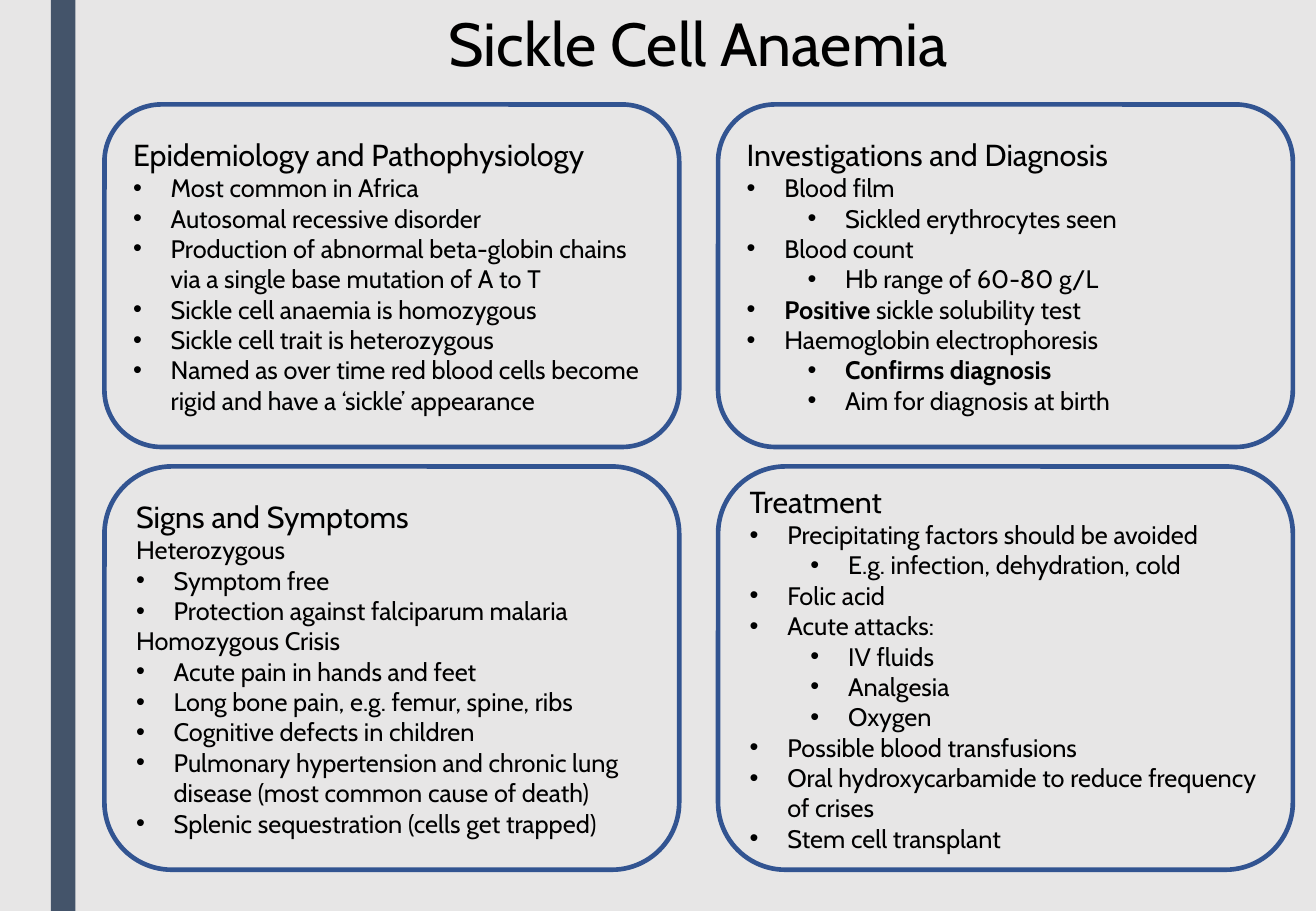
from lxml import etree
from pptx import Presentation
from pptx.dml.color import RGBColor
from pptx.enum import shapes, text
from pptx.oxml.ns import qn
from pptx.util import Inches, Pt

TITLE = "Sickle Cell Anaemia"
FONT = "Cabin"
BACK, BAR, EDGE, INK = "E7E6E6", "44546A", "325491", "000000"

# Each line is (level, text) or (level, bold text, text); level 0 has no bullet.
# Panels run row by row.
PANELS = [
    ("Epidemiology and Pathophysiology", [
        (1, "Most common in Africa"),
        (1, "Autosomal recessive disorder"),
        (1, "Production of abnormal beta-globin chains via a single base mutation of A to T"),
        (1, "Sickle cell anaemia is homozygous"),
        (1, "Sickle cell trait is heterozygous"),
        (1, "Named as over time red blood cells become rigid and have a ‘sickle’ appearance"),
    ]),
    ("Investigations and Diagnosis", [
        (1, "Blood film"),
        (2, "Sickled erythrocytes seen"),
        (1, "Blood count"),
        (2, "Hb range of 60-80 g/L"),
        (1, "Positive ", "sickle solubility test"),
        (1, "Haemoglobin electrophoresis"),
        (2, "Confirms diagnosis", ""),
        (2, "Aim for diagnosis at birth"),
    ]),
    ("Signs and Symptoms", [
        (0, "Heterozygous"),
        (1, "Symptom free"),
        (1, "Protection against falciparum malaria"),
        (0, "Homozygous Crisis"),
        (1, "Acute pain in hands and feet"),
        (1, "Long bone pain, e.g. femur, spine, ribs"),
        (1, "Cognitive defects in children"),
        (1, "Pulmonary hypertension and chronic lung disease (most common cause of death)"),
        (1, "Splenic sequestration (cells get trapped)"),
    ]),
    ("Treatment", [
        (1, "Precipitating factors should be avoided"),
        (2, "E.g. infection, dehydration, cold"),
        (1, "Folic acid"),
        (1, "Acute attacks:"),
        (2, "IV fluids"),
        (2, "Analgesia"),
        (2, "Oxygen"),
        (1, "Possible blood transfusions"),
        (1, "Oral hydroxycarbamide to reduce frequency of crises"),
        (1, "Stem cell transplant"),
    ]),
]
COLS = [0.86, 5.91]
ROWS = [(0.86, 2.82), (3.84, 3.32)]  # top, height
WIDTH = 4.73
HANG, STEP = 0.31, 0.5


def color(code):
    return RGBColor.from_string(code)


def style(para, size, align):
    para.alignment = align
    para.font.size = Pt(size)
    para.font.name = FONT
    para.font.color.rgb = color(INK)


def bullet(para, level):
    para.level = level - 1
    props = para._p.get_or_add_pPr()
    props.set("marL", str(Inches(HANG + STEP * (level - 1))))
    props.set("indent", str(-Inches(HANG)))
    mark = etree.Element(qn("a:buChar"), char="•")
    face = etree.Element(qn("a:buFont"), typeface="Arial")
    props.insert(0, face)
    face.addnext(mark)


def add_line(frame, level, *parts):
    para = frame.add_paragraph()
    for i, part in enumerate(filter(None, parts)):
        run = para.add_run()
        run.text = part
        if len(parts) == 2 and i == 0:
            run.font.bold = True
    style(para, 15, text.PP_ALIGN.LEFT)
    if level:
        bullet(para, level)


def add_panel(slide, box, head, lines):
    panel = slide.shapes.add_shape(shapes.MSO_SHAPE.ROUNDED_RECTANGLE, *map(Inches, box))
    panel.shadow.inherit = False
    panel.fill.background()
    panel.line.color.rgb = color(EDGE)
    panel.line.width = Pt(2.75)
    frame = panel.text_frame
    frame.word_wrap = True
    frame.vertical_anchor = text.MSO_ANCHOR.MIDDLE
    para = frame.paragraphs[0]
    para.text = head
    style(para, 18, text.PP_ALIGN.LEFT)
    for line in lines:
        add_line(frame, *line)


def main():
    deck = Presentation()
    deck.slide_width, deck.slide_height = Inches(10.83), Inches(7.5)
    slide = deck.slides.add_slide(deck.slide_layouts[6])
    slide.background.fill.solid()
    slide.background.fill.fore_color.rgb = color(BACK)

    bar = slide.shapes.add_shape(
        shapes.MSO_SHAPE.RECTANGLE, Inches(0.42), 0, Inches(0.2), deck.slide_height)
    bar.shadow.inherit = False
    bar.fill.solid()
    bar.fill.fore_color.rgb = color(BAR)
    bar.line.fill.background()

    title = slide.shapes.add_textbox(Inches(0.66), 0, Inches(10.17), Inches(0.71))
    title.text_frame.word_wrap = True
    para = title.text_frame.paragraphs[0]
    para.text = TITLE
    style(para, 36, text.PP_ALIGN.CENTER)

    for i, (head, lines) in enumerate(PANELS):
        row, col = divmod(i, len(COLS))
        top, height = ROWS[row]
        add_panel(slide, (COLS[col], top, WIDTH, height), head, lines)

    deck.save("out.pptx")


if __name__ == "__main__":
    main()
